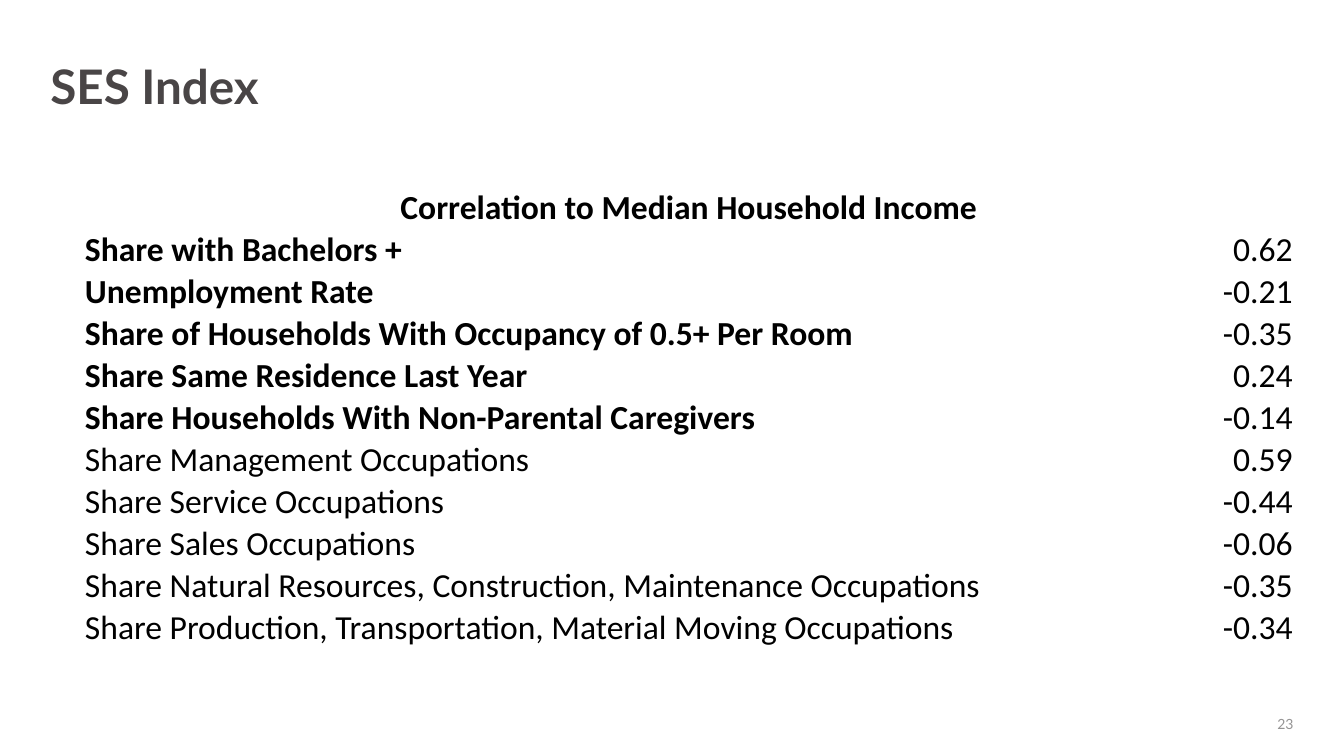
from dataclasses import dataclass

from pptx import Presentation
from pptx.dml.color import RGBColor
from pptx.enum.text import MSO_ANCHOR, MSO_AUTO_SIZE, PP_ALIGN
from pptx.util import Pt

LEFT, CENTER, RIGHT = PP_ALIGN.LEFT, PP_ALIGN.CENTER, PP_ALIGN.RIGHT
TOP, MIDDLE, BOTTOM = MSO_ANCHOR.TOP, MSO_ANCHOR.MIDDLE, MSO_ANCHOR.BOTTOM
NO_AUTOFIT = MSO_AUTO_SIZE.NONE
TITLE_ONLY = 5


@dataclass(frozen=True)
class Theme:
    heading_font: str = "Lato"
    table_font: str = "Calibri"
    title_color: RGBColor = RGBColor(0x49, 0x45, 0x46)
    table_color: RGBColor = RGBColor(0, 0, 0)
    number_color: RGBColor = RGBColor(0x95, 0x94, 0x94)
    title_size: int = 34
    table_size: int = 24
    number_size: int = 10


THEME = Theme()
HEADER = "Correlation to Median Household Income"
CORRELATIONS = [
    ("Share with Bachelors +", "0.62", True),
    ("Unemployment Rate", "-0.21", True),
    ("Share of Households With Occupancy of 0.5+ Per Room", "-0.35", True),
    ("Share Same Residence Last Year", "0.24", True),
    ("Share Households With Non-Parental Caregivers", "-0.14", True),
    ("Share Management Occupations", "0.59", False),
    ("Share Service Occupations", "-0.44", False),
    ("Share Sales Occupations", "-0.06", False),
    ("Share Natural Resources, Construction, Maintenance Occupations", "-0.35", False),
    ("Share Production, Transportation, Material Moving Occupations", "-0.34", False),
]


def apply_format(target, values):
    for name, value in values.items():
        setattr(target, name, value)


def margins(left, top, right, bottom):
    return {"margin_left": Pt(left), "margin_top": Pt(top),
            "margin_right": Pt(right), "margin_bottom": Pt(bottom)}


def write_text(frame, text, align, font, size, color, bold=False):
    paragraph = frame.paragraphs[0]
    paragraph.alignment = align
    run = paragraph.add_run()
    run.text = text
    apply_format(run.font, {"name": font, "size": Pt(size), "bold": bold})
    run.font.color.rgb = color
    return paragraph


def place_title(slide, text, left, top, width, height):
    title = slide.shapes.title
    apply_format(title, {"left": Pt(left), "top": Pt(top),
                         "width": Pt(width), "height": Pt(height)})
    frame = title.text_frame
    apply_format(frame, {"word_wrap": True, "auto_size": NO_AUTOFIT,
                         "vertical_anchor": TOP, **margins(0, 3.6, 0, 3.6)})
    paragraph = write_text(frame, text, LEFT, THEME.heading_font,
                           THEME.title_size, THEME.title_color, bold=True)
    paragraph.line_spacing = 0.9


def write_cell(cell, text, align, bold):
    apply_format(cell, {"vertical_anchor": BOTTOM, **margins(0.7, 0.7, 0.7, 0)})
    write_text(cell.text_frame, text, align, THEME.table_font,
               THEME.table_size, THEME.table_color, bold)


def place_correlations(slide, left, top, width, height, value_width):
    row_count = len(CORRELATIONS) + 1
    table = slide.shapes.add_table(row_count, 2, Pt(left), Pt(top),
                                   Pt(width), Pt(height)).table
    apply_format(table, {"first_row": False, "horz_banding": False})
    table.columns[0].width = Pt(width - value_width)
    table.columns[1].width = Pt(value_width)
    for row in table.rows:
        row.height = Pt(height / row_count)
    for cell in table.iter_cells():
        cell.fill.background()

    heading = table.cell(0, 0)
    heading.merge(table.cell(0, 1))
    write_cell(heading, HEADER, CENTER, True)
    for index, (measure, correlation, in_index) in enumerate(CORRELATIONS, 1):
        write_cell(table.cell(index, 0), measure, LEFT, in_index)
        write_cell(table.cell(index, 1), correlation, RIGHT, False)


def place_page_number(slide, number, left, top, width, height):
    frame = slide.shapes.add_textbox(Pt(left), Pt(top), Pt(width), Pt(height)).text_frame
    apply_format(frame, {"word_wrap": True, "vertical_anchor": MIDDLE,
                         **margins(0, 0, 0, 0)})
    write_text(frame, number, RIGHT, THEME.heading_font,
               THEME.number_size, THEME.number_color)


def main():
    deck = Presentation()
    apply_format(deck, {"slide_width": Pt(960), "slide_height": Pt(540)})
    slide = deck.slides.add_slide(deck.slide_layouts[TITLE_ONLY])
    place_title(slide, "SES Index", 36, 41.76, 888, 91.44)
    place_correlations(slide, 60, 133.2, 864, 324.72, 115.92)
    place_page_number(slide, "23", 708, 509, 216, 16.5)
    deck.save("out.pptx")


if __name__ == "__main__":
    main()
